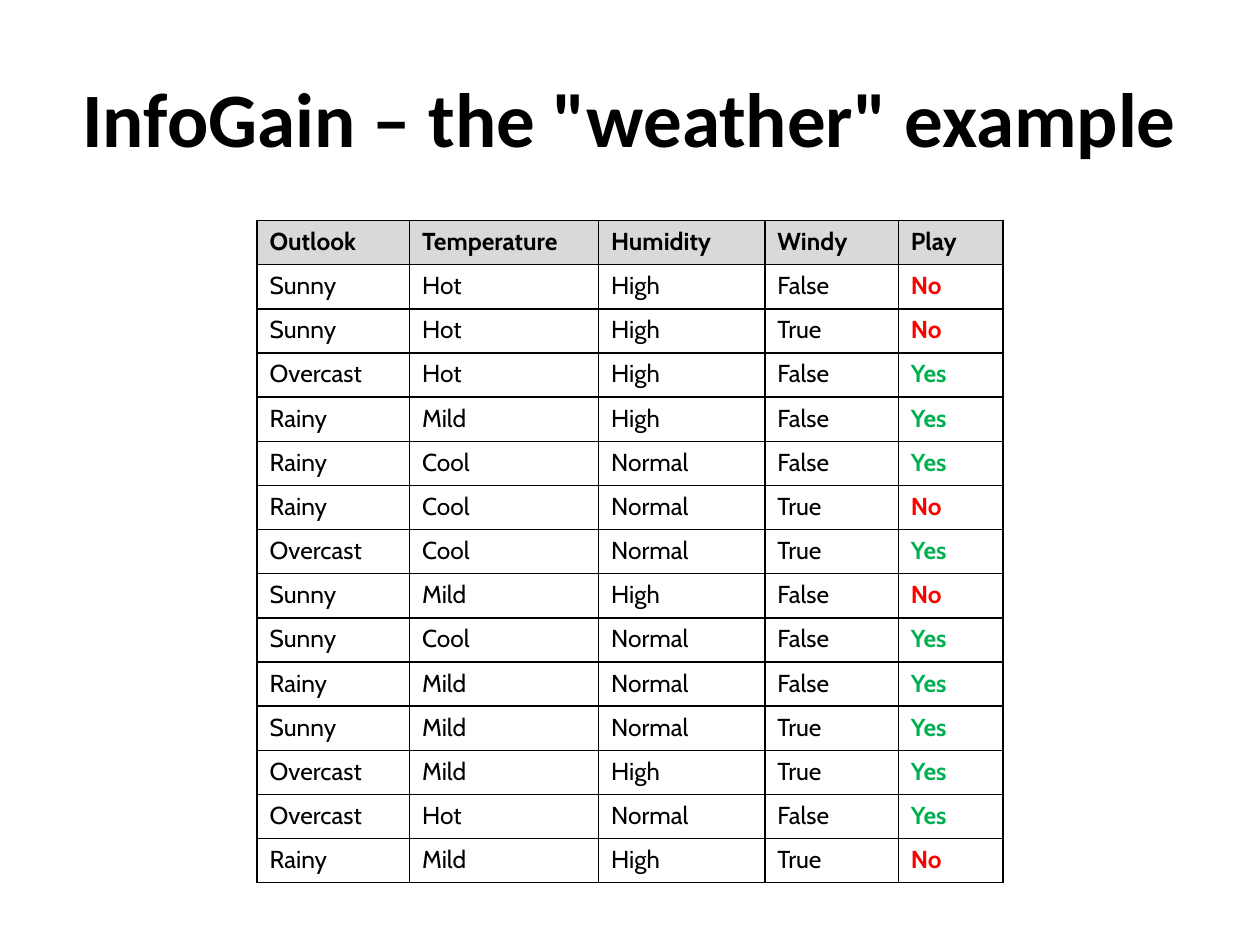
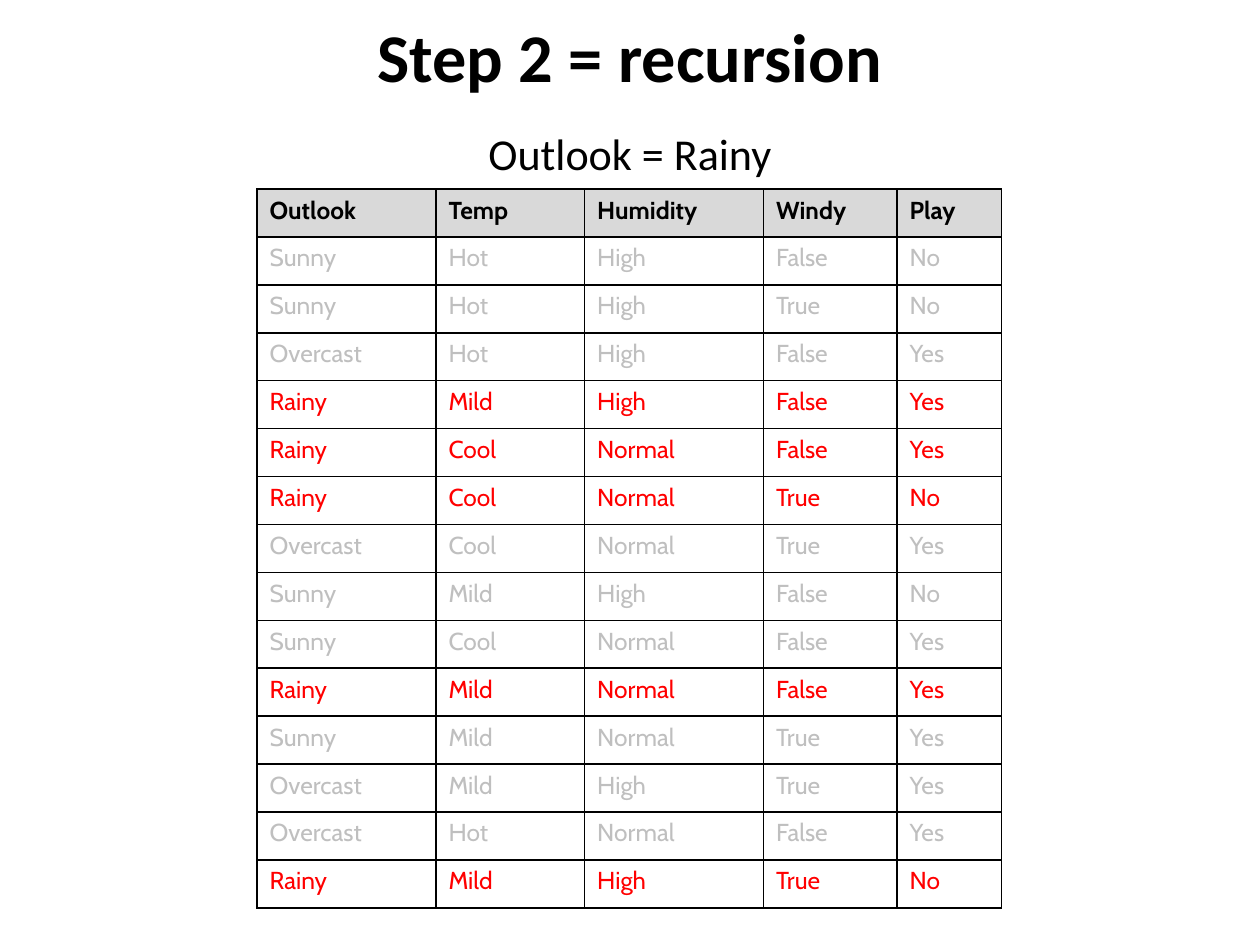
from dataclasses import dataclass
from typing import Callable

from lxml.etree import SubElement
from pptx import Presentation
from pptx.dml.color import RGBColor
from pptx.enum.text import MSO_ANCHOR as Anchor, PP_ALIGN as Align
from pptx.oxml.ns import qn
from pptx.util import Inches, Pt

BLACK = "000000"
RED = "FF0000"
GREEN = "00B050"
FADED = "BFBFBF"
HEADER_FILL = "D9D9D9"
TITLE_FONT = "Calibri"
TABLE_FONT = "Cabin"
TABLE_LEFT = 2.04

WEATHER = [
    tuple(line.split())
    for line in """
    Sunny Hot High False No
    Sunny Hot High True No
    Overcast Hot High False Yes
    Rainy Mild High False Yes
    Rainy Cool Normal False Yes
    Rainy Cool Normal True No
    Overcast Cool Normal True Yes
    Sunny Mild High False No
    Sunny Cool Normal False Yes
    Rainy Mild Normal False Yes
    Sunny Mild Normal True Yes
    Overcast Mild High True Yes
    Overcast Hot Normal False Yes
    Rainy Mild High True No
    """.strip().splitlines()
]


@dataclass(frozen=True)
class TextStyle:
    color: str
    bold: bool = False


@dataclass(frozen=True)
class Heading:
    text: str
    left: float
    top: float
    width: float
    height: float
    size: float
    bold: bool = True


@dataclass(frozen=True)
class WeatherTable:
    top: float
    height: float
    headers: tuple[str, ...]
    widths: tuple[float, ...]
    style_for: Callable[[tuple[str, ...], int], TextStyle]


@dataclass(frozen=True)
class Page:
    headings: tuple[Heading, ...]
    table: WeatherTable


def rgb(color: str) -> RGBColor:
    return RGBColor.from_string(color)


def style_paragraph(para, font: str, size: float, style: TextStyle) -> None:
    para.font.name = font
    para.font.size = Pt(size)
    para.font.bold = style.bold
    para.font.color.rgb = rgb(style.color)


def add_heading(slide, heading: Heading) -> None:
    box = slide.shapes.add_textbox(
        Inches(heading.left), Inches(heading.top),
        Inches(heading.width), Inches(heading.height),
    )
    frame = box.text_frame
    frame.word_wrap = True
    frame.vertical_anchor = Anchor.MIDDLE
    para = frame.paragraphs[0]
    para.text = heading.text
    para.alignment = Align.CENTER
    style_paragraph(para, TITLE_FONT, heading.size, TextStyle(BLACK, heading.bold))


def add_borders(cell) -> None:
    properties = cell._tc.get_or_add_tcPr()
    for side in ("a:lnL", "a:lnR", "a:lnT", "a:lnB"):
        line = SubElement(properties, qn(side), w=str(Pt(1)))
        fill = SubElement(line, qn("a:solidFill"))
        SubElement(fill, qn("a:srgbClr"), val=BLACK)


def fill_cell(cell, text: str, style: TextStyle, is_header: bool) -> None:
    add_borders(cell)
    if is_header:
        cell.fill.solid()
        cell.fill.fore_color.rgb = rgb(HEADER_FILL)
    else:
        cell.fill.background()
    para = cell.text_frame.paragraphs[0]
    para.text = text
    style_paragraph(para, TABLE_FONT, 14, style)


def add_weather_table(slide, spec: WeatherTable) -> None:
    rows = [spec.headers, *WEATHER]
    table = slide.shapes.add_table(
        len(rows), len(spec.headers), Inches(TABLE_LEFT), Inches(spec.top),
        Inches(sum(spec.widths)), Inches(spec.height),
    ).table
    table.first_row = False
    table.horz_banding = False
    for column, width in zip(table.columns, spec.widths):
        column.width = Inches(width)
    for row_index, values in enumerate(rows):
        is_header = row_index == 0
        for column_index, text in enumerate(values):
            style = TextStyle(BLACK, True) if is_header else spec.style_for(values, column_index)
            fill_cell(table.cell(row_index, column_index), text, style, is_header)


def play_style(values: tuple[str, ...], column: int) -> TextStyle:
    if column < len(values) - 1:
        return TextStyle(BLACK)
    return TextStyle(GREEN if values[column] == "Yes" else RED, True)


def rainy_style(values: tuple[str, ...], column: int) -> TextStyle:
    return TextStyle(RED if values[0] == "Rainy" else FADED)


PAGES = (
    Page(
        (Heading('InfoGain – the "weather" example', 0.25, 0.3, 9.5, 1.25, 44),),
        WeatherTable(
            1.75, 5.26,
            ("Outlook", "Temperature", "Humidity", "Windy", "Play"),
            (1.21, 1.5, 1.32, 1.06, 0.83),
            play_style,
        ),
    ),
    Page(
        (
            Heading("Outlook = Rainy", 0.5, 1.08, 9, 0.27, 25.2, bold=False),
            Heading("Step 2 = recursion", 0.5, 0.08, 9, 0.72, 39),
        ),
        WeatherTable(
            1.5, 5.71,
            ("Outlook", "Temp", "Humidity", "Windy", "Play"),
            (1.42, 1.18, 1.42, 1.06, 0.83),
            rainy_style,
        ),
    ),
)


def main() -> None:
    deck = Presentation()
    deck.slide_width = Inches(10)
    deck.slide_height = Inches(7.5)
    blank_layout = deck.slide_layouts[6]
    for page in PAGES:
        slide = deck.slides.add_slide(blank_layout)
        add_weather_table(slide, page.table)
        for heading in page.headings:
            add_heading(slide, heading)
    deck.save("out.pptx")


if __name__ == "__main__":
    main()
